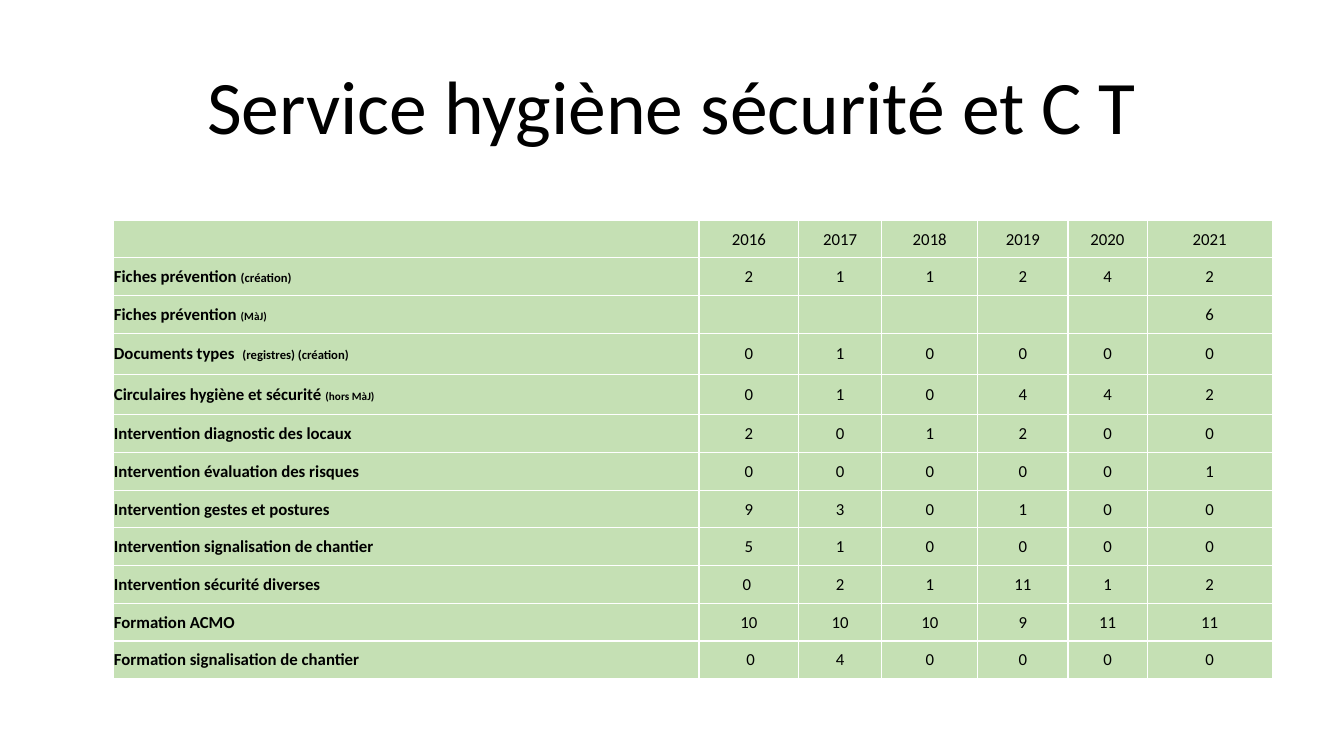
from lxml.etree import SubElement
from pptx import Presentation
from pptx.dml.color import RGBColor
from pptx.enum.text import MSO_ANCHOR, MSO_AUTO_SIZE, PP_ALIGN
from pptx.oxml.ns import qn
from pptx.util import Pt

FONT = "Calibri"
BLACK = RGBColor(0x00, 0x00, 0x00)
WHITE = RGBColor(0xFF, 0xFF, 0xFF)
GREEN = RGBColor(0xC5, 0xE0, 0xB4)

TITLE = "Service hygiène sécurité et C T"
YEARS = ["2016", "2017", "2018", "2019", "2020", "2021"]
# Label, small note, note size, one value per year
ROWS = [
    ("Fiches prévention ", "(création)", 9, ["2", "1", "1", "2", "4", "2"]),
    ("Fiches prévention ", "(MàJ)", 8, ["", "", "", "", "", "6"]),
    ("Documents types  ", "(registres) (création)", 9, ["0", "1", "0", "0", "0", "0"]),
    ("Circulaires hygiène et sécurité ", "(hors MàJ)", 8, ["0", "1", "0", "4", "4", "2"]),
    ("Intervention diagnostic des locaux", "", 9, ["2", "0", "1", "2", "0", "0"]),
    ("Intervention évaluation des risques", "", 9, ["0", "0", "0", "0", "0", "1"]),
    ("Intervention gestes et postures", "", 9, ["9", "3", "0", "1", "0", "0"]),
    ("Intervention signalisation de chantier", "", 9, ["5", "1", "0", "0", "0", "0"]),
    ("Intervention sécurité diverses", "", 9, ["0 ", "2", "1", "11", "1", "2"]),
    ("Formation ACMO", "", 9, ["10", "10", "10", "9", "11", "11"]),
    ("Formation signalisation de chantier", "", 9, [" 0", "4", "0", "0", "0", "0"]),
]
WIDTHS = [418.5, 71.2, 59.4, 68.6, 64.4, 56.6, 89.3]
HEIGHT = 26.93
TALL = {3: 29.5, 4: 28.8}


def write(para, text, size=12, bold=False, align=PP_ALIGN.CENTER):
    """Add a run to the paragraph; blank text adds nothing."""
    para.alignment = align
    if not text:
        return
    run = para.add_run()
    run.text = text
    run.font.name = FONT
    run.font.size = Pt(size)
    run.font.bold = bold
    run.font.color.rgb = BLACK


def add_title(slide):
    title = slide.shapes.title
    title.left, title.top = Pt(66), Pt(39.6)
    title.width, title.height = Pt(828), Pt(77.76)
    frame = title.text_frame
    frame.word_wrap = True
    frame.auto_size = MSO_AUTO_SIZE.NONE
    frame.vertical_anchor = MSO_ANCHOR.MIDDLE
    para = frame.paragraphs[0]
    para.line_spacing = 0.9
    write(para, TITLE, size=54)


def border(cell):
    """Draw a thin white line on all four sides."""
    props = cell._tc.get_or_add_tcPr()
    for at, side in enumerate(("a:lnL", "a:lnR", "a:lnT", "a:lnB")):
        line = SubElement(props, qn(side), w=str(Pt(1)))
        fill = SubElement(line, qn("a:solidFill"))
        SubElement(fill, qn("a:srgbClr"), val=str(WHITE))
        props.insert(at, line)


def style(cell):
    cell.fill.solid()
    cell.fill.fore_color.rgb = GREEN
    cell.vertical_anchor = MSO_ANCHOR.MIDDLE
    cell.margin_left = cell.margin_right = cell.margin_top = Pt(0.6)
    cell.margin_bottom = Pt(0)
    border(cell)


def add_grid(slide):
    heights = [TALL.get(i, HEIGHT) for i in range(len(ROWS) + 1)]
    frame = slide.shapes.add_table(
        len(heights), len(WIDTHS), Pt(80.8), Pt(157.2),
        Pt(sum(WIDTHS)), Pt(sum(heights)))
    table = frame.table
    for col, width in zip(table.columns, WIDTHS):
        col.width = Pt(width)
    for row, height in zip(table.rows, heights):
        row.height = Pt(height)
    for cell in table.iter_cells():
        style(cell)
    for r, (label, note, size, _) in enumerate(ROWS, 1):
        para = table.cell(r, 0).text_frame.paragraphs[0]
        write(para, label, bold=True, align=PP_ALIGN.LEFT)
        write(para, note, size=size, bold=True, align=PP_ALIGN.LEFT)
    for r, values in enumerate([YEARS] + [row[3] for row in ROWS]):
        for c, value in enumerate(values, 1):
            write(table.cell(r, c).text_frame.paragraphs[0], value)


def main():
    deck = Presentation()
    deck.slide_width, deck.slide_height = Pt(960), Pt(540)
    slide = deck.slides.add_slide(deck.slide_layouts[5])
    add_title(slide)
    add_grid(slide)
    deck.save("out.pptx")


if __name__ == "__main__":
    main()
